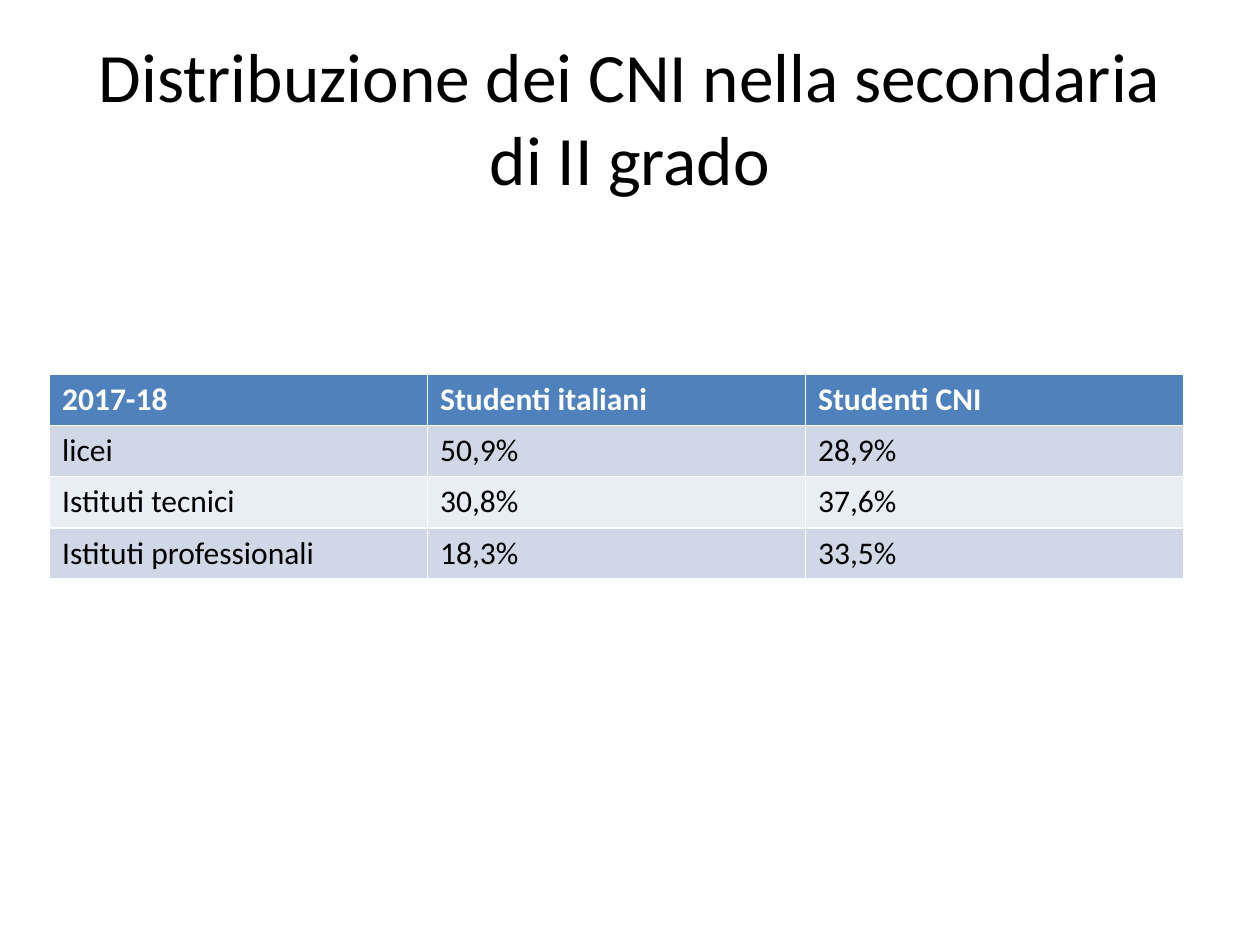
from dataclasses import dataclass

from pptx import Presentation
from pptx.dml.color import RGBColor
from pptx.enum.text import MSO_ANCHOR, PP_ALIGN
from pptx.util import Pt


@dataclass(frozen=True)
class Theme:
    font: str = "Calibri"
    title_size: float = 39.6
    table_size: float = 18
    text: str = "000000"
    header_text: str = "FFFFFF"
    header_fill: str = "4F81BD"
    band_fills: tuple = ("D0D8E8", "E9EDF4")


theme = Theme()


def format_runs(paragraph, size, color, bold=False):
    for run in paragraph.runs:
        run.font.name = theme.font
        run.font.size = Pt(size)
        run.font.bold = bold
        run.font.color.rgb = RGBColor.from_string(color)


presentation = Presentation()
presentation.slide_width = Pt(720)
presentation.slide_height = Pt(540)
slide = presentation.slides.add_slide(presentation.slide_layouts[6])

# Title
title = slide.shapes.add_textbox(Pt(36), Pt(21.6), Pt(648), Pt(90))
title_frame = title.text_frame
title_frame.word_wrap = True
title_frame.vertical_anchor = MSO_ANCHOR.MIDDLE
title_frame.text = "Distribuzione dei CNI nella secondaria di II grado"
title_paragraph = title_frame.paragraphs[0]
title_paragraph.alignment = PP_ALIGN.CENTER
format_runs(title_paragraph, theme.title_size, theme.text)

# Table: the default table style supplies the white cell borders
rows = [
    ("2017-18", "Studenti italiani", "Studenti CNI"),
    ("licei", "50,9%", "28,9%"),
    ("Istituti tecnici", "30,8%", "37,6%"),
    ("Istituti professionali", "18,3%", "33,5%"),
]
row_height = 29.2
table = slide.shapes.add_table(
    len(rows), len(rows[0]), Pt(28.35), Pt(214), Pt(648), Pt(row_height * len(rows))
).table

for row_index, values in enumerate(rows):
    table.rows[row_index].height = Pt(row_height)
    is_header = row_index == 0
    fill = theme.header_fill if is_header else theme.band_fills[(row_index - 1) % 2]
    color = theme.header_text if is_header else theme.text
    for column_index, value in enumerate(values):
        cell = table.cell(row_index, column_index)
        cell.fill.solid()
        cell.fill.fore_color.rgb = RGBColor.from_string(fill)
        cell.text_frame.text = value
        format_runs(cell.text_frame.paragraphs[0], theme.table_size, color, is_header)

presentation.save("out.pptx")
